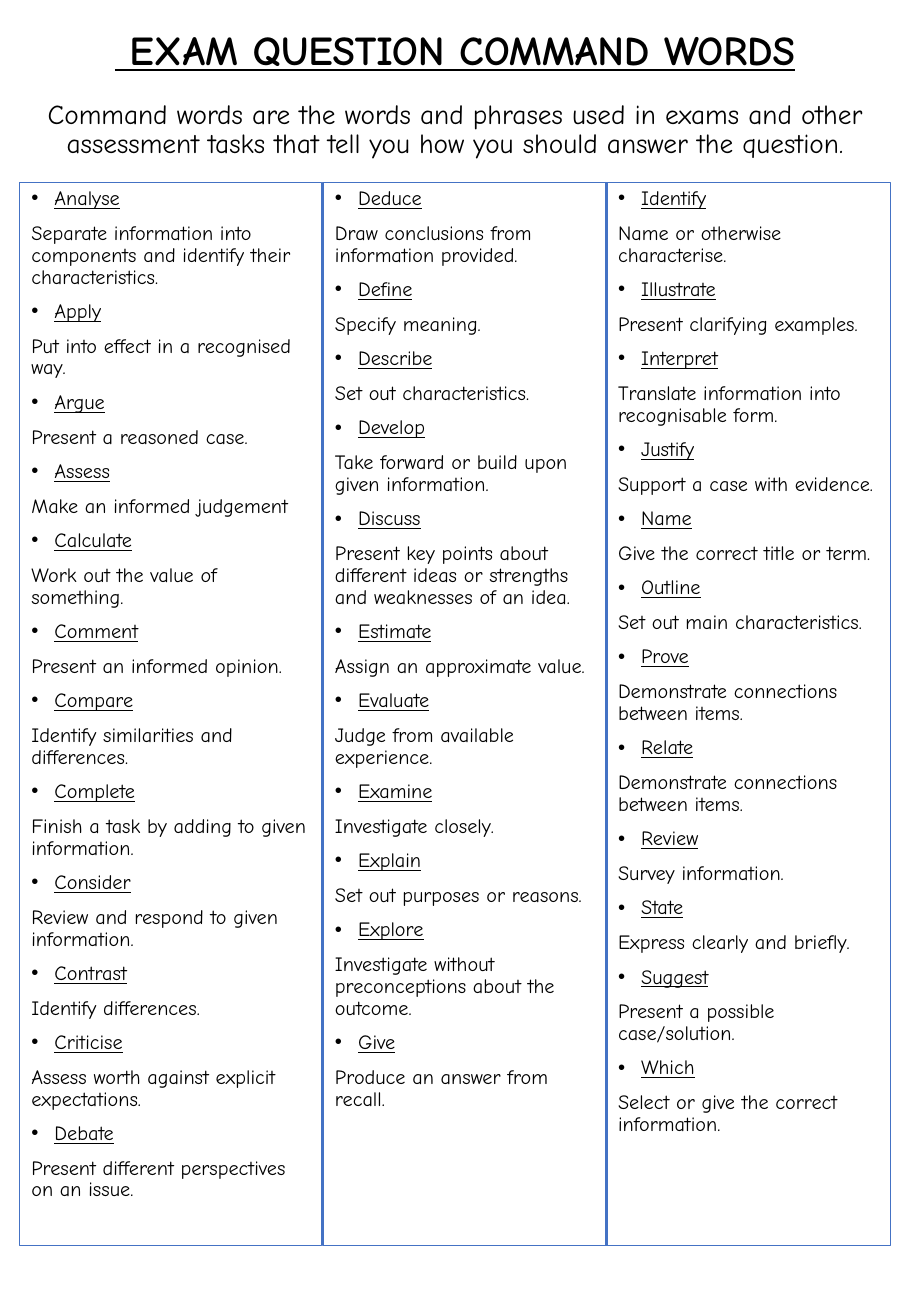
from dataclasses import dataclass

from lxml.etree import SubElement as Sub
from pptx import Presentation
from pptx.dml.color import RGBColor as Rgb
from pptx.enum.shapes import MSO_SHAPE as Shape
from pptx.enum.text import MSO_ANCHOR as Anchor, PP_ALIGN as Align
from pptx.oxml.ns import qn
from pptx.util import Pt

PX = 9144  # EMU in one px, 100 px to the inch


@dataclass(frozen=True)
class Theme:
    font: str = "Comic Neue"
    ink: Rgb = Rgb(0, 0, 0)
    edge: Rgb = Rgb(0x44, 0x72, 0xC4)
    title: float = 24.3
    intro: float = 16.2
    body: float = 12
    line: float = 0.75
    lead: float = 0.9
    gap: float = 7.5


THEME = Theme()
TITLE = " EXAM QUESTION COMMAND WORDS"
INTRO = ("Command words are the words and phrases used in exams and other "
         "assessment tasks that tell you how you should answer the question.")
TOP, HIGH, HANG = 150, 875, 19

A_TO_D = [
    ("Analyse", "Separate information into components and identify their characteristics."),
    ("Apply", "Put into effect in a recognised way."),
    ("Argue", "Present a reasoned case."),
    ("Assess", "Make an informed judgement"),
    ("Calculate", "Work out the value of something."),
    ("Comment", "Present an informed opinion."),
    ("Compare", "Identify similarities and differences."),
    ("Complete", "Finish a task by adding to given information."),
    ("Consider", "Review and respond to given information."),
    ("Contrast", "Identify differences."),
    ("Criticise", "Assess worth against explicit expectations."),
    ("Debate", "Present different perspectives on an issue."),
]
D_TO_G = [
    ("Deduce", "Draw conclusions from information provided."),
    ("Define", "Specify meaning."),
    ("Describe", "Set out characteristics."),
    ("Develop", "Take forward or build upon given information."),
    ("Discuss", "Present key points about different ideas or strengths "
                "and weaknesses of an idea."),
    ("Estimate", "Assign an approximate value."),
    ("Evaluate", "Judge from available experience."),
    ("Examine", "Investigate closely."),
    ("Explain", "Set out purposes or reasons."),
    ("Explore", "Investigate without preconceptions about the outcome."),
    ("Give", "Produce an answer from recall."),
]
I_TO_W = [
    ("Identify", "Name or otherwise characterise."),
    ("Illustrate", "Present clarifying examples."),
    ("Interpret", "Translate information into recognisable form."),
    ("Justify", "Support a case with evidence."),
    ("Name", "Give the correct title or term."),
    ("Outline", "Set out main characteristics."),
    ("Prove", "Demonstrate connections between items."),
    ("Relate", "Demonstrate connections between items."),
    ("Review", "Survey information."),
    ("State", "Express clearly and briefly."),
    ("Suggest", "Present a possible case/solution."),
    ("Which", "Select or give the correct information."),
]
# left, width, entries
COLUMNS = [(16, 249, A_TO_D), (266, 234, D_TO_G), (499, 234, I_TO_W)]


def style(para, size, align, gap=0, bold=False, under=False):
    para.alignment = align
    para.line_spacing = THEME.lead
    para.space_before = Pt(gap)
    for run in para.runs:
        font = run.font
        font.name, font.size = THEME.font, Pt(size)
        font.bold, font.underline = bold, under
        font.color.rgb = THEME.ink


def bullet(para):
    """Give the paragraph a round bullet with a hanging indent."""
    props = para._p.get_or_add_pPr()
    props.set("marL", str(HANG * PX))
    props.set("indent", str(-HANG * PX))
    Sub(props, qn("a:buFont"), typeface="Arial")
    Sub(props, qn("a:buChar"), char="•")


def header(slide):
    box = slide.shapes.add_textbox(12 * PX, 31 * PX, 725 * PX, 94 * PX)
    frame = box.text_frame
    frame.word_wrap = True
    frame.vertical_anchor = Anchor.MIDDLE
    frame.text = f"{TITLE}\n{INTRO}"
    title, intro = frame.paragraphs
    style(title, THEME.title, Align.CENTER, bold=True, under=True)
    style(intro, THEME.intro, Align.CENTER, gap=16)


def column(slide, left, width, entries):
    box = slide.shapes.add_shape(
        Shape.RECTANGLE, left * PX, TOP * PX, width * PX, HIGH * PX)
    box.shadow.inherit = False
    box.fill.background()
    box.line.color.rgb = THEME.edge
    box.line.width = Pt(THEME.line)
    frame = box.text_frame
    frame.word_wrap = True
    frame.vertical_anchor = Anchor.TOP
    frame.text = "\n".join(f"{word}\n{sense}" for word, sense in entries)
    for i, para in enumerate(frame.paragraphs):
        is_word = i % 2 == 0
        style(para, THEME.body, Align.LEFT, gap=THEME.gap, under=is_word)
        if is_word:
            bullet(para)


def main():
    deck = Presentation()
    deck.slide_width, deck.slide_height = 750 * PX, 1083 * PX
    slide = deck.slides.add_slide(deck.slide_layouts[6])
    header(slide)
    for left, width, entries in COLUMNS:
        column(slide, left, width, entries)
    deck.save("out.pptx")


if __name__ == "__main__":
    main()
